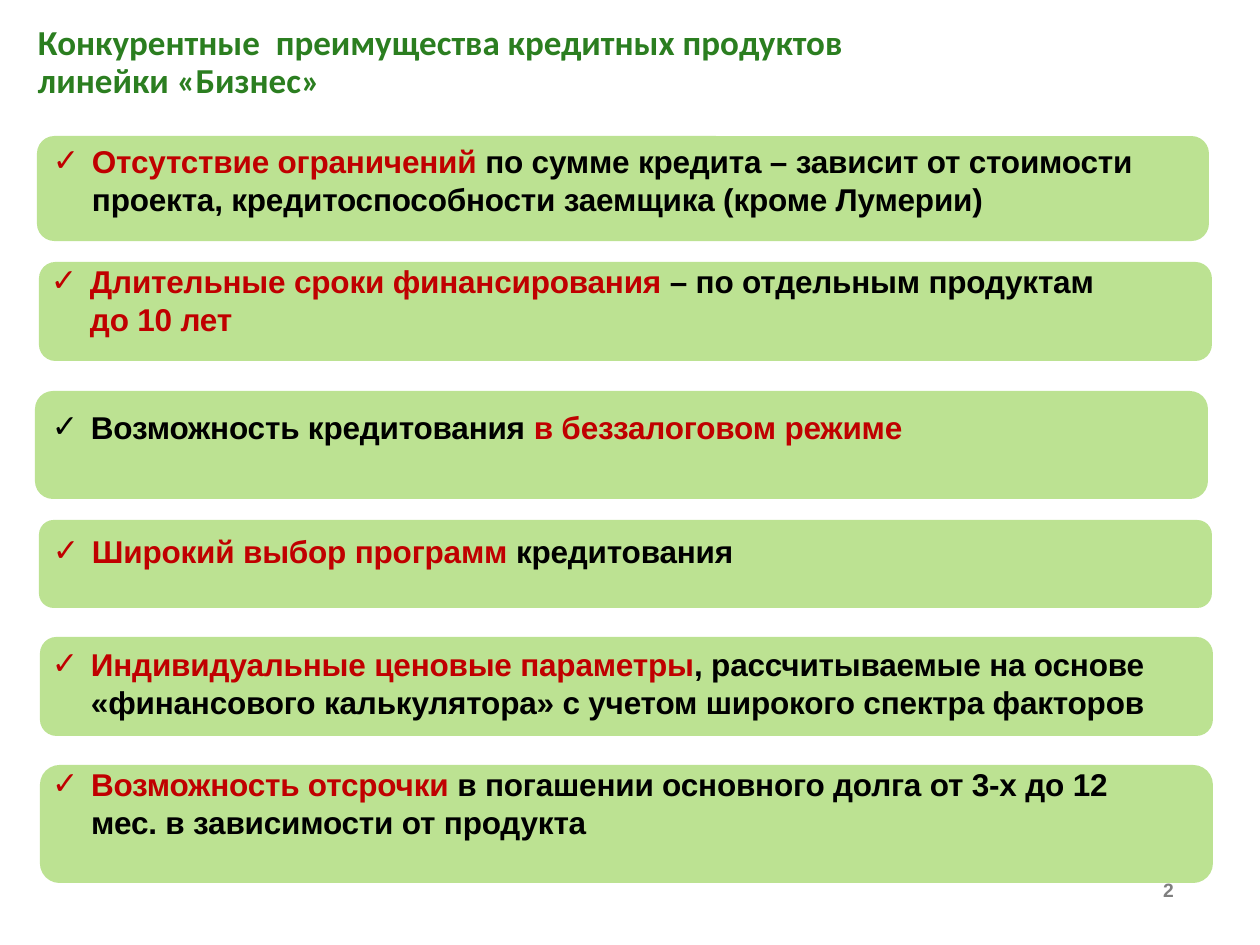
from lxml.etree import SubElement
from pptx import Presentation
from pptx.dml.color import RGBColor
from pptx.enum.shapes import MSO_SHAPE
from pptx.enum.text import MSO_ANCHOR, MSO_AUTO_SIZE, PP_ALIGN
from pptx.oxml.ns import qn
from pptx.util import Emu, Pt

PX = 914400 / 126
GREEN = RGBColor(0x2B, 0x7E, 0x20)
LIME = RGBColor(0xBC, 0xE2, 0x92)
RED = RGBColor(0xC0, 0x00, 0x00)
BLACK = RGBColor(0x00, 0x00, 0x00)
GRAY = RGBColor(0x7F, 0x7F, 0x7F)

TITLE_FONT = {"name": "Calibri", "size": Pt(20), "bold": True}
ITEM_FONT = {"name": "Arial", "size": Pt(18), "bold": True}
NUMBER_FONT = {"name": "Arial", "size": Pt(11), "bold": True}

BANDS = [
    (37, 136, 1172, 105),
    (39, 262, 1173, 99),
    (35, 391, 1173, 108),
    (39, 520, 1173, 88),
    (40, 637, 1173, 99),
    (40, 765, 1173, 118),
]
ITEMS = [
    ((50, 142, 1174, 94), [
        ("Отсутствие ограничений ", RED),
        ("по сумме кредита – зависит от стоимости проекта, "
         "кредитоспособности заемщика (кроме Лумерии)", BLACK)]),
    ((48, 262, 1160, 108), [
        ("Длительные сроки финансирования ", RED),
        ("– по отдельным продуктам ", BLACK),
        ("до 10 лет", RED)]),
    ((49, 408, 1174, 69), [
        ("Возможность кредитования ", BLACK),
        ("в беззалоговом режиме", RED)]),
    ((50, 532, 1172, 79), [
        ("Широкий выбор программ ", RED),
        ("кредитования", BLACK)]),
    ((49, 645, 1173, 94), [
        ("Индивидуальные ценовые параметры", RED),
        (", рассчитываемые на основе «финансового калькулятора» "
         "с учетом широкого спектра факторов", BLACK)]),
    ((49, 765, 1164, 105), [
        ("Возможность отсрочки ", RED),
        ("в погашении основного долга от 3-х до 12 мес. "
         "в зависимости от продукта", BLACK)]),
]


def px(length):
    return Emu(round(length * PX))


def apply(target, values):
    for name, value in values.items():
        setattr(target, name, value)


def place(shape, area):
    apply(shape, dict(zip(("left", "top", "width", "height"), map(px, area))))


def set_frame(frame, left, top, right, bottom, wrap=True):
    apply(frame, {
        "margin_left": px(left), "margin_top": px(top),
        "margin_right": px(right), "margin_bottom": px(bottom),
        "word_wrap": wrap, "auto_size": MSO_AUTO_SIZE.NONE,
        "vertical_anchor": MSO_ANCHOR.TOP,
    })


def add_span(para, text, values, color):
    span = para.add_run()
    span.text = text
    apply(span.font, values)
    span.font.color.rgb = color
    return span


def add_check_bullet(para):
    properties = para._p.get_or_add_pPr()
    properties.set("marL", str(px(42)))
    properties.set("indent", str(px(-39)))
    SubElement(properties, qn("a:buFont"), typeface="Arial")
    SubElement(properties, qn("a:buChar"), char="✓")


def add_title(page, text):
    title = page.shapes.title
    place(title, (25, 19, 953, 89))
    set_frame(title.text_frame, 13, 6, 13, 6)
    para = title.text_frame.paragraphs[0]
    apply(para, {"alignment": PP_ALIGN.LEFT, "line_spacing": 0.9})
    add_span(para, text, TITLE_FONT, GREEN)


def add_band(page, area):
    band = page.shapes.add_shape(MSO_SHAPE.ROUNDED_RECTANGLE, *map(px, area))
    band.shadow.inherit = False
    band.fill.solid()
    band.fill.fore_color.rgb = LIME
    band.line.fill.background()


def add_item(page, area, parts):
    box = page.shapes.add_textbox(*map(px, area))
    set_frame(box.text_frame, 0, 0, 76, 0)
    para = box.text_frame.paragraphs[0]
    add_check_bullet(para)
    for text, color in parts:
        span = add_span(para, text, ITEM_FONT, color)
        span.font._element.set("spc", "-10")


def add_page_number(page, text):
    box = page.shapes.add_textbox(*map(px, (1144, 872, 49, 36)))
    set_frame(box.text_frame, 13, 6, 13, 6, wrap=False)
    para = box.text_frame.paragraphs[0]
    para.alignment = PP_ALIGN.CENTER
    add_span(para, text, NUMBER_FONT, GRAY)


def main():
    deck = Presentation()
    apply(deck, {"slide_width": px(1260), "slide_height": px(945)})
    page = deck.slides.add_slide(deck.slide_layouts[5])
    add_title(page, "Конкурентные  преимущества кредитных продуктов линейки «Бизнес»")
    for area in BANDS:
        add_band(page, area)
    for area, parts in ITEMS:
        add_item(page, area, parts)
    add_page_number(page, "2")
    deck.save("out.pptx")


if __name__ == "__main__":
    main()
